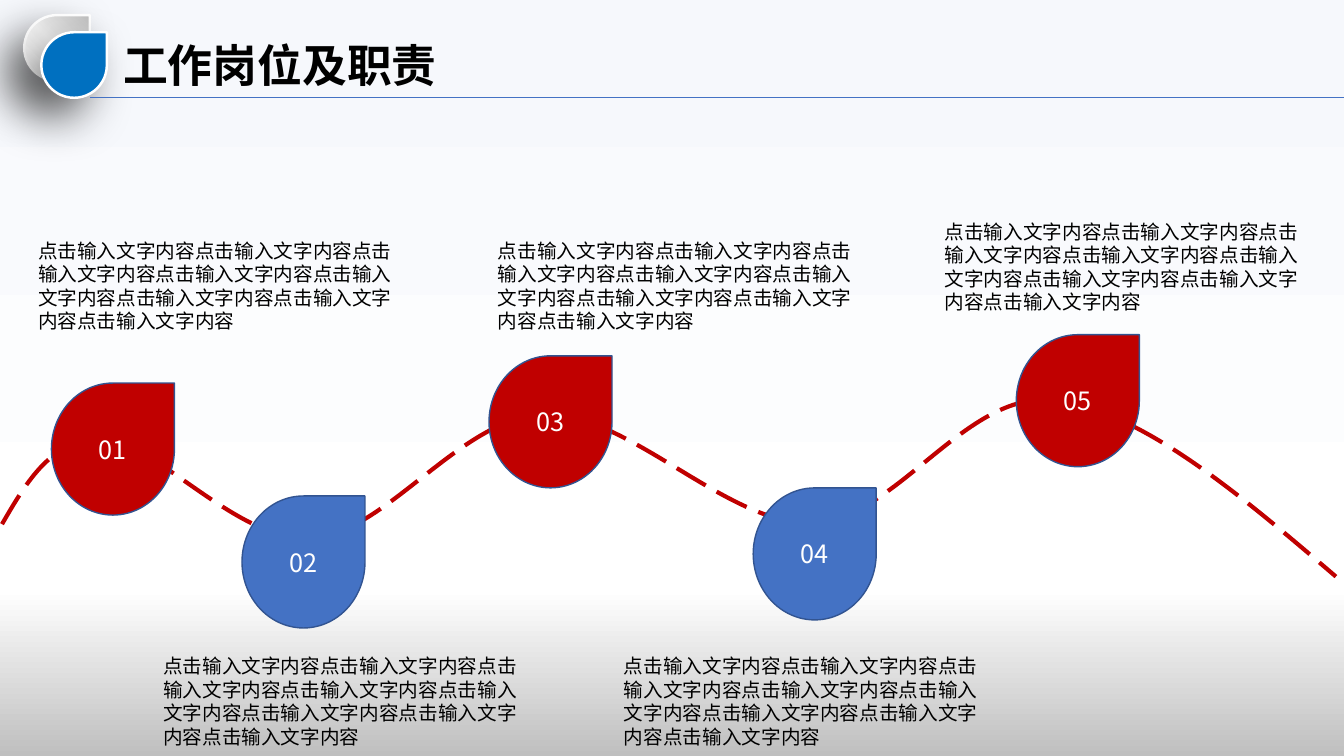
from dataclasses import dataclass

from lxml.etree import SubElement
from pptx import Presentation
from pptx.dml.color import RGBColor
from pptx.enum.dml import MSO_LINE
from pptx.enum.shapes import MSO_CONNECTOR, MSO_SHAPE
from pptx.enum.text import MSO_ANCHOR, MSO_AUTO_SIZE, PP_ALIGN
from pptx.oxml.ns import qn
from pptx.util import Inches, Pt


@dataclass(frozen=True)
class Theme:
    font: str = "Noto Sans CJK SC"
    black: str = "000000"
    white: str = "FFFFFF"
    red: str = "C00000"
    blue: str = "4472C4"
    badge_blue: str = "0070C0"
    drop_edge: str = "325491"
    backdrop: tuple = ((0, "F6F8FC"), (78, "FFFFFF"), (100, "BFBFBF"))
    silver: tuple = ((0, "FFFFFF"), (50, "F2F2F2"), (100, "BFBFBF"))
    title_size: int = 32
    number_size: int = 18
    body_size: int = 14
    body_leading: float = 16.8


THEME = Theme()
DESCRIPTION = "点击输入文字内容" * 8
DROP_SIZE = (1.22, 1.31)
DESCRIPTION_SIZE = (3.8, 1.04)
STATIONS = [
    ("01", THEME.red, (0.51, 3.8), (0.28, 2.32)),
    ("02", THEME.blue, (2.4, 4.92), (1.52, 6.44)),
    ("03", THEME.red, (4.85, 3.53), (4.84, 2.32)),
    ("04", THEME.blue, (7.47, 4.84), (6.09, 6.44)),
    ("05", THEME.red, (10.08, 3.32), (9.27, 2.13)),
]
ROUTE_START = (0.02, 5.2)
ROUTE_CURVES = [
    ((0.27, 4.77), (0.52, 4.34), (1.03, 4.36)),
    ((1.54, 4.38), (2.37, 5.39), (3.09, 5.34)),
    ((3.82, 5.3), (4.57, 4.14), (5.39, 4.11)),
    ((6.22, 4.08), (7.21, 5.21), (8.05, 5.19)),
    ((8.89, 5.16), (9.57, 3.88), (10.44, 3.97)),
    ((11.3, 4.06), (12.28, 4.89), (13.25, 5.72)),
]


def rgb(color):
    return RGBColor.from_string(color)


def write(frame, text, *, size, color, bold=False, align=PP_ALIGN.LEFT,
          anchor=MSO_ANCHOR.TOP, leading=None):
    frame.word_wrap = True
    frame.auto_size = MSO_AUTO_SIZE.NONE
    frame.vertical_anchor = anchor
    paragraph = frame.paragraphs[0]
    paragraph.alignment = align
    paragraph.line_spacing = Pt(leading) if leading else 1.0
    run = paragraph.add_run()
    run.text = text
    run.font.name = THEME.font
    run.font.size = Pt(size)
    run.font.bold = bold
    run.font.color.rgb = rgb(color)
    east_asian = SubElement(run.font._element, qn("a:ea"))
    east_asian.set("typeface", THEME.font)


def paint_gradient(fill, owner, stops, angle):
    fill.gradient()
    fill.gradient_angle = 360 - angle
    stop_list = owner.find(".//" + qn("a:gsLst"))
    for default_stop in list(stop_list):
        stop_list.remove(default_stop)
    for position, color in stops:
        stop = SubElement(stop_list, qn("a:gs"), pos=str(position * 1000))
        SubElement(stop, qn("a:srgbClr"), val=color)


def outline(line, color, width):
    line.color.rgb = rgb(color)
    line.width = Pt(width)


def add_drop(slide, position, size, edge, edge_width, fill=None):
    drop = slide.shapes.add_shape(
        MSO_SHAPE.TEAR, *map(Inches, (*position, *size)))
    drop.shadow.inherit = False
    outline(drop.line, edge, edge_width)
    if fill:
        drop.fill.solid()
        drop.fill.fore_color.rgb = rgb(fill)
    else:
        paint_gradient(drop.fill, drop._element, THEME.silver, 315)
    return drop


def add_badge(slide, position, fill=None):
    badge = add_drop(slide, position, (0.65, 0.65), THEME.white, 1.75, fill)
    effects = badge._element.spPr.find(qn("a:effectLst"))
    shadow = SubElement(effects, qn("a:outerShdw"), blurRad=str(Pt(35)),
                        dist=str(Pt(20)), dir=str(135 * 60000), rotWithShape="0")
    shade = SubElement(shadow, qn("a:srgbClr"), val=THEME.black)
    SubElement(shade, qn("a:alpha"), val="50000")


def add_header(slide):
    add_badge(slide, (0.24, 0.15))
    add_badge(slide, (0.41, 0.32), THEME.badge_blue)
    rule = slide.shapes.add_connector(
        MSO_CONNECTOR.STRAIGHT, *map(Inches, (0.89, 0.97, 13.33, 0.97)))
    outline(rule.line, THEME.blue, 0.5)
    SubElement(rule._element.spPr, qn("a:effectLst"))
    title = slide.shapes.title
    title.left, title.top, title.width, title.height = map(
        Inches, (1.12, 0.32, 4.2, 0.64))
    write(title.text_frame, "工作岗位及职责", size=THEME.title_size,
          color=THEME.black, bold=True, anchor=MSO_ANCHOR.MIDDLE)


def add_route(slide):
    builder = slide.shapes.build_freeform(*map(Inches, ROUTE_START))
    builder.add_line_segments(
        [tuple(map(Inches, curve[-1])) for curve in ROUTE_CURVES], close=False)
    route = builder.convert_to_shape()
    outline_path = route._element.find(".//" + qn("a:path"))
    for segment, curve in zip(outline_path.findall(qn("a:lnTo")), ROUTE_CURVES):
        bend = SubElement(outline_path, qn("a:cubicBezTo"))
        for x, y in curve:
            SubElement(bend, qn("a:pt"), x=str(Inches(x) - route.left),
                       y=str(Inches(y) - route.top))
        outline_path.remove(segment)
    route.shadow.inherit = False
    route.fill.background()
    outline(route.line, THEME.red, 3)
    route.line.dash_style = MSO_LINE.LONG_DASH


def add_station(slide, number, color, drop_position, description_position):
    drop = add_drop(slide, drop_position, DROP_SIZE, THEME.drop_edge, 1, color)
    write(drop.text_frame, number, size=THEME.number_size, color=THEME.white,
          align=PP_ALIGN.CENTER, anchor=MSO_ANCHOR.MIDDLE)
    description = slide.shapes.add_textbox(
        *map(Inches, (*description_position, *DESCRIPTION_SIZE)))
    write(description.text_frame, DESCRIPTION, size=THEME.body_size,
          color=THEME.black, leading=THEME.body_leading)


def main():
    deck = Presentation()
    deck.slide_width, deck.slide_height = Inches(13.33), Inches(7.5)
    slide = deck.slides.add_slide(deck.slide_layouts.get_by_name("Title Only"))
    paint_gradient(slide.background.fill, slide._element, THEME.backdrop, 90)
    add_header(slide)
    add_route(slide)
    for station in STATIONS:
        add_station(slide, *station)
    deck.save("out.pptx")


if __name__ == "__main__":
    main()
